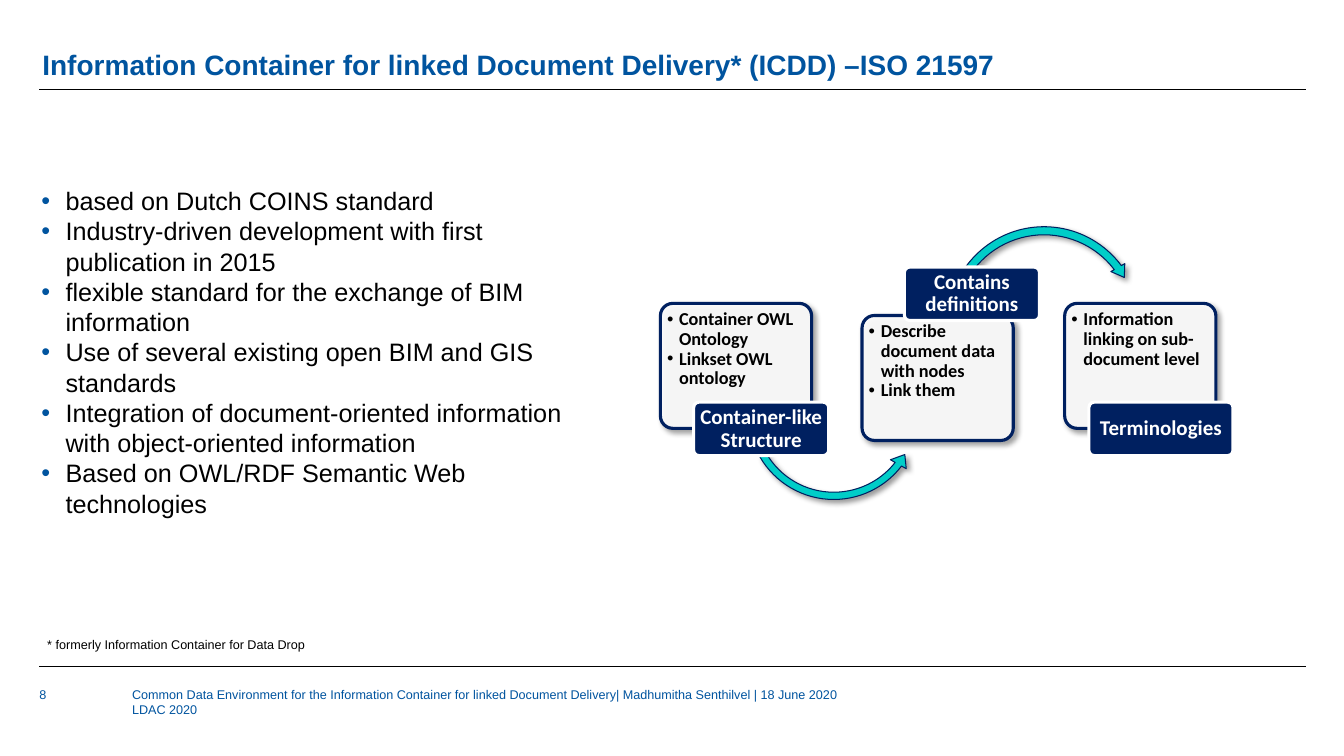
from lxml import etree
from pptx import Presentation
from pptx.dml.color import RGBColor
from pptx.enum.shapes import MSO_CONNECTOR, MSO_SHAPE
from pptx.enum.text import MSO_ANCHOR, MSO_AUTO_SIZE, PP_ALIGN
from pptx.oxml.ns import qn
from pptx.util import Inches, Pt

BLUE, NAVY, TEAL, BLACK, WHITE = "00549F", "002060", "00CDC8", "000000", "FFFFFF"

BULLETS = [
    "based on Dutch COINS standard",
    "Industry-driven development with first publication in 2015",
    "flexible standard for the exchange of BIM information",
    "Use of several existing open BIM and GIS standards",
    "Integration of document-oriented information with object-oriented information",
    "Based on OWL/RDF Semantic Web technologies",
]
FOOTER = [
    "Common Data Environment for the Information Container for linked "
    "Document Delivery| Madhumitha Senthilvel | 18 June 2020",
    "LDAC 2020",
]
# Each stage: card position, card points, label box, label text, arrow
STAGES = [
    ((6.55, 3.01), ["Container OWL Ontology", "Linkset OWL ontology"],
     (6.88, 3.99, 1.34, 0.53), "Container-like Structure",
     (MSO_SHAPE.LEFT_CIRCULAR_ARROW, (7.37, 3.21, 1.8, 1.8),
      (0.04, 4.91, 22.66, 90.25, 0.05))),
    ((8.55, 3.13), ["Describe document data with nodes", "Link them"],
     (8.97, 2.65, 1.34, 0.53), "Contains definitions",
     (MSO_SHAPE.CIRCULAR_ARROW, (9.36, 2.21, 1.99, 1.99),
      (0.04, 4.39, 193.85, 125.76, 0.04))),
    ((10.56, 3.01), ["Information linking on sub-document level"],
     (10.8, 3.99, 1.43, 0.53), "Terminologies", None),
]


def color(hex_code):
    return RGBColor.from_string(hex_code)


def inches(box):
    return [Inches(length) for length in box]


def add_element(parent, tag, **attributes):
    return etree.SubElement(parent, qn(tag), attributes)


def add_bullet(paragraph, indent, hex_code):
    properties = paragraph._p.get_or_add_pPr()
    properties.set("marL", str(Inches(indent)))
    properties.set("indent", str(-Inches(indent)))
    add_element(add_element(properties, "a:buClr"), "a:srgbClr", val=hex_code)
    add_element(properties, "a:buFont", typeface="Arial")
    add_element(properties, "a:buChar", char="•")


def write(frame, lines, size, hex_code, font="Arial", bold=False, spacing=1.0,
          align=PP_ALIGN.LEFT, anchor=MSO_ANCHOR.TOP, margins=(0, 0), indent=None,
          bullet=BLACK):
    frame.word_wrap = True
    frame.auto_size = MSO_AUTO_SIZE.NONE
    frame.vertical_anchor = anchor
    frame.margin_left = frame.margin_right = Inches(margins[0])
    frame.margin_top = frame.margin_bottom = Inches(margins[1])
    frame.text = "\n".join(lines)
    for paragraph in frame.paragraphs:
        paragraph.alignment = align
        paragraph.line_spacing = spacing
        paragraph.space_before = paragraph.space_after = Pt(0)
        if indent:
            add_bullet(paragraph, indent, bullet)
        for run in paragraph.runs:
            run.font.name, run.font.size, run.font.bold = font, Pt(size), bold
            run.font.color.rgb = color(hex_code)


def add_shadow(shape):
    effects = add_element(shape._element.spPr, "a:effectLst")
    shadow = add_element(effects, "a:outerShdw", blurRad=str(Pt(4)), dist=str(Pt(3)),
                         dir="2700000", algn="tl", rotWithShape="0")
    shade = add_element(shadow, "a:srgbClr", val=BLACK)
    add_element(shade, "a:alpha", val="40000")


def add_figure(slide, kind, box, adjustments, fill, line, width, shadow=True):
    shape = slide.shapes.add_shape(kind, *inches(box))
    for index, value in enumerate(adjustments):
        shape.adjustments[index] = value
    shape.fill.solid()
    shape.fill.fore_color.rgb = color(fill)
    shape.line.color.rgb = color(line)
    shape.line.width = Pt(width)
    if shadow:
        add_shadow(shape)
    else:
        shape.shadow.inherit = False
    return shape


def add_rule(slide, left, top, width):
    rule = slide.shapes.add_connector(
        MSO_CONNECTOR.STRAIGHT, *inches((left, top, left + width, top)))
    rule.line.color.rgb = color(BLACK)
    rule.line.width = Pt(0.5)
    add_element(rule._element.spPr, "a:effectLst")


def add_text(slide, box, lines, size, hex_code, **options):
    textbox = slide.shapes.add_textbox(*inches(box))
    write(textbox.text_frame, lines, size, hex_code, **options)


def place(placeholder, box):
    (placeholder.left, placeholder.top,
     placeholder.width, placeholder.height) = inches(box)
    return placeholder.text_frame


def add_header(slide, box):
    left, top, width, height = box
    write(place(slide.shapes.title, box),
          ["Information Container for linked Document Delivery* (ICDD) –ISO 21597"],
          20, BLUE, bold=True, spacing=0.9, anchor=MSO_ANCHOR.BOTTOM)
    add_rule(slide, left - 0.03, top + height + 0.08, width)


def add_bullet_list(slide, box):
    write(place(slide.placeholders[1], box), BULLETS, 18, BLACK,
          indent=0.24, bullet=BLUE)


def add_stage(slide, position, points, label_box, label, arrow):
    # Card with its points
    card = add_figure(slide, MSO_SHAPE.ROUNDED_RECTANGLE, (*position, 1.5, 1.24),
                      [0.1], WHITE, NAVY, 2.25)
    fill_color = card._element.spPr.find(qn("a:solidFill")).find(qn("a:srgbClr"))
    add_element(fill_color, "a:alpha", val="90000")
    write(card.text_frame, points, 13, BLACK, font="Calibri", bold=True, spacing=0.9,
          margins=(0.03, 0.03), indent=0.12)
    # Arrow to the next stage, partly behind the label
    if arrow:
        add_figure(slide, *arrow, TEAL, NAVY, 0.75)
    plate = add_figure(slide, MSO_SHAPE.ROUNDED_RECTANGLE, label_box, [0.1],
                       NAVY, WHITE, 2.25, shadow=False)
    write(plate.text_frame, [label], 15, WHITE, font="Calibri", bold=True, spacing=0.9,
          align=PP_ALIGN.CENTER, anchor=MSO_ANCHOR.MIDDLE, margins=(0.03, 0.02))


def add_footer(slide, box):
    left, top, width, height = box
    add_rule(slide, left, top, width)
    add_text(slide, (left, top + 0.2, 0.8, 0.43), ["8"], 9, BLUE)
    add_text(slide, (left + 0.92, top + 0.2, 7.66, height - 0.2), FOOTER, 9, BLUE)


def main():
    presentation = Presentation()
    presentation.slide_width, presentation.slide_height = Inches(13.33), Inches(7.5)
    slide = presentation.slides.add_slide(presentation.slide_layouts[1])
    add_header(slide, (0.42, 0.22, 12.56, 0.59))
    add_bullet_list(slide, (0.41, 1.84, 5.24, 4.52))
    for stage in STAGES:
        add_stage(slide, *stage)
    # Footnote
    add_text(slide, (0.37, 6.27, 12.36, 0.25),
             ["* formerly Information Container for Data Drop"], 9, BLACK,
             margins=(0.1, 0.05))
    add_footer(slide, (0.39, 6.61, 12.56, 0.89))
    presentation.save("out.pptx")


if __name__ == "__main__":
    main()
